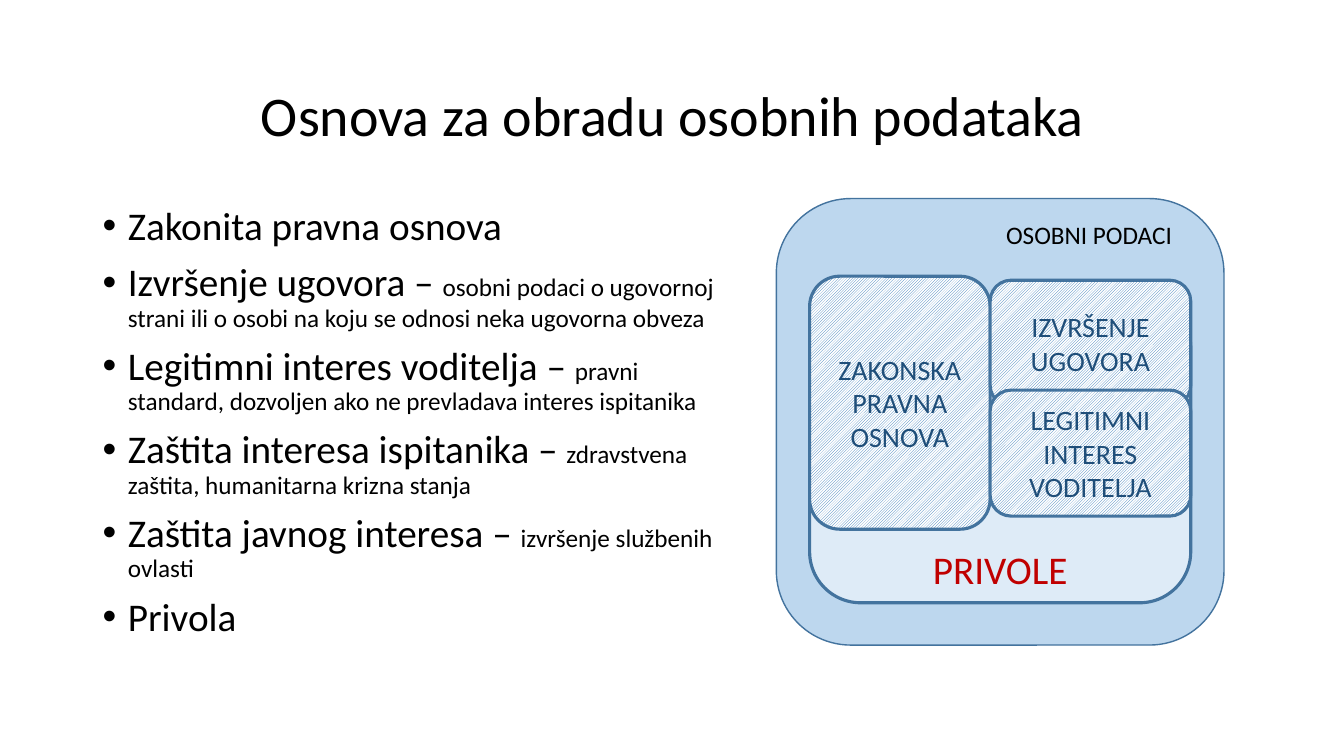
from pptx import Presentation
from pptx import util as u
from pptx.dml.color import RGBColor
from pptx.enum import dml, shapes, text
from pptx.oxml import parse_xml
from pptx.oxml.ns import nsdecls

COLORS = {"black": "000000", "outer": "BDD7EE", "inner": "DEEBF7", "line": "43739E",
          "hatch": "2E75B6", "white": "FFFFFF", "label": "1F4E79", "consent": "C00000"}


def color(name):
    return RGBColor.from_string(COLORS[name])


def style(paragraph, size, name):
    for run in paragraph.runs:
        run.font.name = "Calibri"
        run.font.size = u.Pt(size)
        run.font.color.rgb = color(name)


presentation = Presentation()
presentation.slide_width = u.Inches(13.33)
presentation.slide_height = u.Inches(7.5)
slide = presentation.slides.add_slide(presentation.slide_layouts[6])

# Title
title = slide.shapes.add_textbox(u.Inches(0.92), u.Inches(0.45), u.Inches(11.5), u.Inches(1.45))
title.text_frame.word_wrap = True
title.text_frame.vertical_anchor = text.MSO_ANCHOR.MIDDLE
title.text_frame.text = "Osnova za obradu osobnih podataka"
paragraph = title.text_frame.paragraphs[0]
paragraph.alignment = text.PP_ALIGN.CENTER
paragraph.line_spacing = 0.9
style(paragraph, 40, "black")

# Bulleted list: legal basis and its explanation
BASES = [
    ("Zakonita pravna osnova", ""),
    ("Izvršenje ugovora – ",
     "osobni podaci o ugovornoj strani ili o osobi na koju se odnosi neka ugovorna obveza"),
    ("Legitimni interes voditelja – ",
     "pravni standard, dozvoljen ako ne prevladava interes ispitanika"),
    ("Zaštita interesa ispitanika – ", "zdravstvena zaštita, humanitarna krizna stanja"),
    ("Zaštita javnog interesa – ", "izvršenje službenih ovlasti"),
    ("Privola", ""),
]
body = slide.shapes.add_textbox(u.Inches(0.92), u.Inches(2), u.Inches(6.46), u.Inches(4.76))
body.text_frame.word_wrap = True
for index, (basis, explanation) in enumerate(BASES):
    paragraph = body.text_frame.paragraphs[0] if index == 0 else body.text_frame.add_paragraph()
    paragraph.text = basis
    if explanation:
        paragraph.add_run().text = explanation
    style(paragraph, 28, "black")
    for run in paragraph.runs[1:]:
        run.font.size = u.Pt(18)
    paragraph.line_spacing = 0.9
    paragraph.space_before = u.Pt(10)
    properties = paragraph._p.get_or_add_pPr()
    properties.set("marL", str(u.Inches(0.25)))
    properties.set("indent", str(u.Inches(-0.25)))
    properties.append(parse_xml(f'<a:buFont {nsdecls("a")} typeface="Arial"/>'))
    properties.append(parse_xml(f'<a:buChar {nsdecls("a")} char="•"/>'))

# Nested boxes: label, position and size, fill or hatch, line width, text size and colour
DARK, LIGHT = dml.MSO_PATTERN.DARK_UPWARD_DIAGONAL, dml.MSO_PATTERN.LIGHT_UPWARD_DIAGONAL
BOXES = [
    ("", (7.7, 1.97, 4.44, 4.43), "outer", 1, 18, "black"),
    ("PRIVOLE", (8.03, 2.94, 3.78, 3.04), "inner", 2.25, 28, "consent"),
    ("ZAKONSKA PRAVNA OSNOVA", (8.03, 2.74, 1.79, 2.51), DARK, 2.25, 20, "label"),
    ("IZVRŠENJE UGOVORA", (9.82, 2.78, 1.99, 1.25), DARK, 2.25, 20, "label"),
    ("LEGITIMNI INTERES VODITELJA", (9.82, 3.87, 1.99, 1.25), LIGHT, 2.25, 20, "label"),
]
for label, place, fill, line_width, size, label_color in BOXES:
    box = slide.shapes.add_shape(shapes.MSO_SHAPE.FLOWCHART_ALTERNATE_PROCESS,
                                 *[u.Inches(length) for length in place])
    box.shadow.inherit = False
    if fill in COLORS:
        box.fill.solid()
        box.fill.fore_color.rgb = color(fill)
    else:
        box.fill.patterned()
        box.fill.pattern = fill
        box.fill.fore_color.rgb = color("hatch")
        box.fill.back_color.rgb = color("white")
    box.line.color.rgb = color("line")
    box.line.width = u.Pt(line_width)
    frame = box.text_frame
    frame.word_wrap = True
    frame.vertical_anchor = text.MSO_ANCHOR.MIDDLE
    if fill == "inner":  # label sits in the strip below the hatched boxes
        frame.vertical_anchor = text.MSO_ANCHOR.BOTTOM
        frame.margin_bottom = u.Inches(-0.05)
    frame.text = label
    frame.paragraphs[0].alignment = text.PP_ALIGN.CENTER
    style(frame.paragraphs[0], size, label_color)

# Caption of the outer box
caption = slide.shapes.add_textbox(u.Inches(9.88), u.Inches(2.13), u.Inches(1.86), u.Inches(0.4))
caption.text_frame.word_wrap = False
caption.text_frame.text = "OSOBNI PODACI"
style(caption.text_frame.paragraphs[0], 18, "black")

presentation.save("out.pptx")
